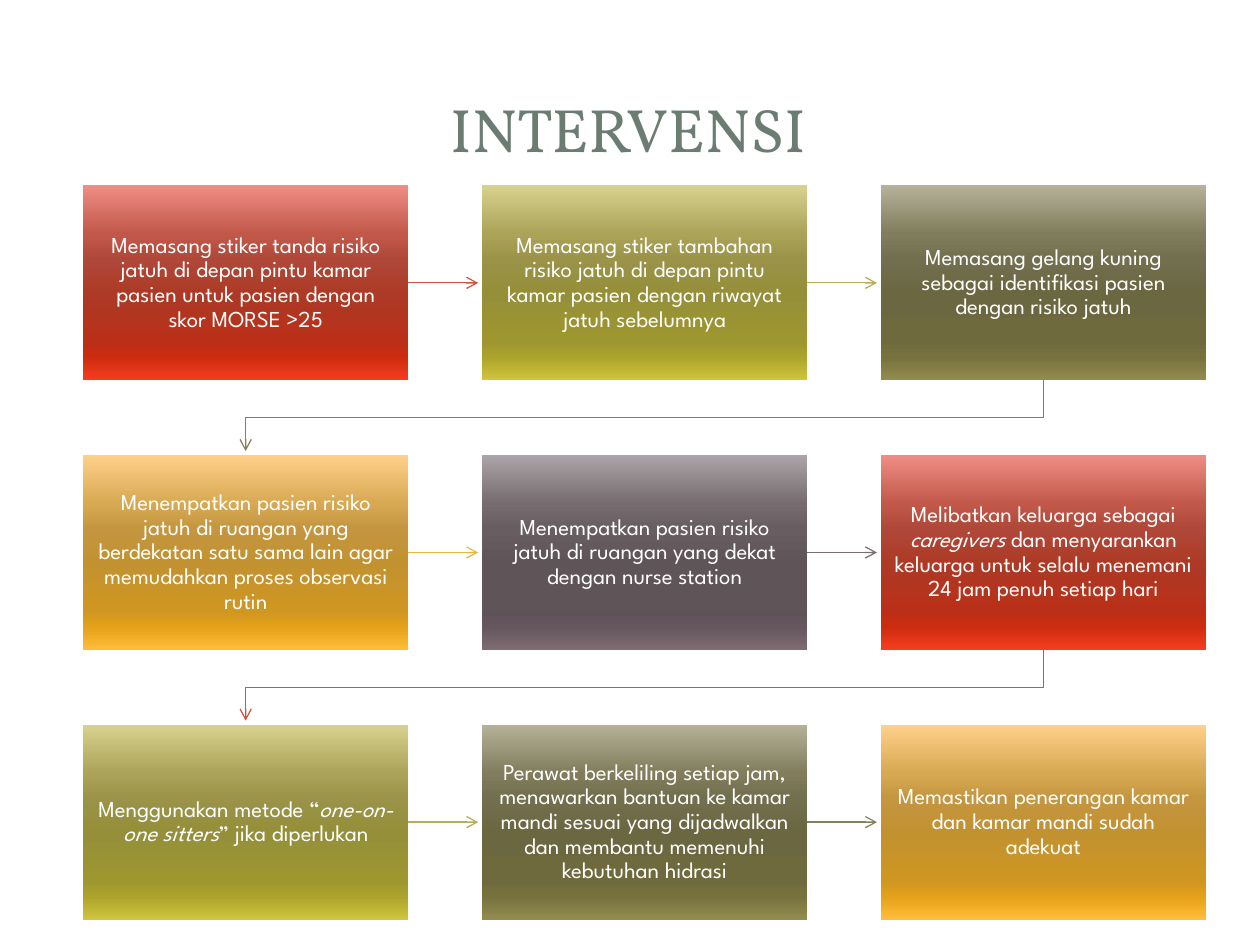
from lxml.etree import SubElement
from pptx import Presentation
from pptx.dml.color import RGBColor
from pptx.enum.shapes import MSO_CONNECTOR, MSO_SHAPE
from pptx.enum.text import MSO_ANCHOR, PP_ALIGN
from pptx.oxml.ns import qn
from pptx.util import Inches, Pt

WHITE = RGBColor(0xFF, 0xFF, 0xFF)
TITLE_GREEN = RGBColor(0x6B, 0x7D, 0x72)
RED = RGBColor(0xCF, 0x54, 0x3F)
LIME = RGBColor(0xB5, 0xAE, 0x53)
OLIVE = RGBColor(0x84, 0x80, 0x58)
AMBER = RGBColor(0xE8, 0xB5, 0x4D)
MAUVE = RGBColor(0x78, 0x6C, 0x71)

STOPS = (0, 25, 38, 55, 80, 88, 100)
GRADIENTS = {
    colour: [RGBColor.from_string(c) for c in shades.split()]
    for colour, shades in (
        (RED, "EF8E85 C1584A B04839 AD3A26 BA2F18 CD2C10 F63D1F"),
        (LIME, "D8D290 AAA358 9A9348 958F39 9E962F ACA32C D0C53D"),
        (OLIVE, "B5B299 807C5C 726F4F 6B6741 6E6A3D 77723D 928C50"),
        (AMBER, "FFD08A D7A952 C49640 C29230 CF9621 E4A119 FFBD3B"),
        (MAUVE, "ACA4A8 766C70 685E62 5F5458 5F5257 65555C 7E6C73"),
    )
}

# Asterisks enclose italic words
STEPS = [
    (RED, "Memasang stiker tanda risiko jatuh di depan pintu kamar pasien "
          "untuk pasien dengan skor MORSE >25"),
    (LIME, "Memasang stiker tambahan risiko jatuh di depan pintu kamar pasien "
           "dengan riwayat jatuh sebelumnya"),
    (OLIVE, "Memasang gelang kuning sebagai identifikasi pasien dengan risiko jatuh"),
    (AMBER, "Menempatkan pasien risiko jatuh di ruangan yang berdekatan satu "
            "sama lain agar memudahkan proses observasi rutin"),
    (MAUVE, "Menempatkan pasien risiko jatuh di ruangan yang dekat dengan nurse station"),
    (RED, "Melibatkan keluarga sebagai *caregivers* dan menyarankan keluarga "
          "untuk selalu menemani 24 jam penuh setiap hari"),
    (LIME, "Menggunakan metode “*one-on-one sitters*” jika diperlukan"),
    (OLIVE, "Perawat berkeliling setiap jam, menawarkan bantuan ke kamar mandi "
            "sesuai yang dijadwalkan dan membantu memenuhi kebutuhan hidrasi"),
    (AMBER, "Memastikan penerangan kamar dan kamar mandi sudah adekuat"),
]

COLUMNS = 3
BOX_W, BOX_H = Inches(2.58), Inches(1.55)
ARROW_GAP = Inches(0.03)


def write_text(sp, text, *, font, size, color, line_spacing=1.0):
    """Fill a shape with centred text; parts between asterisks are italic."""
    tf = sp.text_frame
    tf.word_wrap = True
    tf.vertical_anchor = MSO_ANCHOR.MIDDLE
    tf.margin_left = tf.margin_right = Inches(0.1)
    tf.margin_top = tf.margin_bottom = Inches(0.1)
    p = tf.paragraphs[0]
    p.alignment = PP_ALIGN.CENTER
    p.line_spacing = line_spacing
    for i, part in enumerate(text.split("*")):
        r = p.add_run()
        r.text = part
        r.font.name = font
        r.font.size = Pt(size)
        r.font.color.rgb = color
        r.font.italic = i % 2 == 1


def fill_gradient(sp, shades):
    """Fill top to bottom with one shade for each of STOPS."""
    sp.fill.gradient()
    grad = sp._element.spPr.find(qn("a:gradFill"))
    stops = grad.find(qn("a:gsLst"))
    for stop in list(stops):
        stops.remove(stop)
    for position, shade in zip(STOPS, shades):
        stop = SubElement(stops, qn("a:gs"), pos=str(position * 1000))
        SubElement(stop, qn("a:srgbClr"), val=str(shade))
    grad.find(qn("a:lin")).set("ang", "5400000")


def style_arrow(sp, color):
    sp.line.color.rgb = color
    sp.line.width = Pt(0.75)
    SubElement(sp.line._get_or_add_ln(), qn("a:tailEnd"), type="arrow")
    SubElement(sp._element.spPr, qn("a:effectLst"))


def add_title(s, left, top, width, height):
    sp = s.shapes.add_textbox(left, top, width, height)
    write_text(sp, "INTERVENSI", font="Vollkorn", size=35, color=TITLE_GREEN)


def add_step(s, left, top, color, text):
    sp = s.shapes.add_shape(MSO_SHAPE.RECTANGLE, left, top, BOX_W, BOX_H)
    sp.shadow.inherit = False
    sp.line.fill.background()
    fill_gradient(sp, GRADIENTS[color])
    write_text(sp, text, font="League Spartan", size=13, color=WHITE,
               line_spacing=0.9)
    return sp


def add_arrow_across(s, box, following, color):
    y = box.top + box.height // 2
    arrow = s.shapes.add_connector(MSO_CONNECTOR.STRAIGHT, box.left + box.width, y,
                                   following.left - ARROW_GAP, y)
    arrow.begin_connect(box, 3)
    style_arrow(arrow, color)


def add_arrow_to_next_row(s, box, following, color):
    x1 = box.left + box.width // 2
    x2 = following.left + following.width // 2
    y1 = box.top + box.height
    y2 = following.top - ARROW_GAP
    middle = (y1 + following.top) // 2
    builder = s.shapes.build_freeform(x1, y1)
    builder.add_line_segments([(x1, middle), (x2, middle), (x2, y2)], close=False)
    arrow = builder.convert_to_shape()
    arrow.fill.background()
    style_arrow(arrow, color)


def add_flow(s, left, top, width, height):
    """Lay the steps out row by row and join each one to the next."""
    rows = len(STEPS) // COLUMNS
    pitch_x = (width - BOX_W) // (COLUMNS - 1)
    pitch_y = (height - BOX_H) // (rows - 1)
    boxes = []
    for i, (color, text) in enumerate(STEPS):
        row, column = divmod(i, COLUMNS)
        boxes.append(add_step(s, left + column * pitch_x, top + row * pitch_y,
                              color, text))
    for box, following, (color, _) in zip(boxes, boxes[1:], STEPS):
        same_row = box.top == following.top
        join = add_arrow_across if same_row else add_arrow_to_next_row
        join(s, box, following, color)


def main():
    prs = Presentation()
    prs.slide_width, prs.slide_height = Inches(10), Inches(7.5)
    s = prs.slides.add_slide(prs.slide_layouts[6])
    add_title(s, Inches(0.47), Inches(0.45), Inches(9.03), Inches(1.14))
    add_flow(s, Inches(0.66), Inches(1.47), Inches(8.91), Inches(5.83))
    prs.save("out.pptx")


if __name__ == "__main__":
    main()
